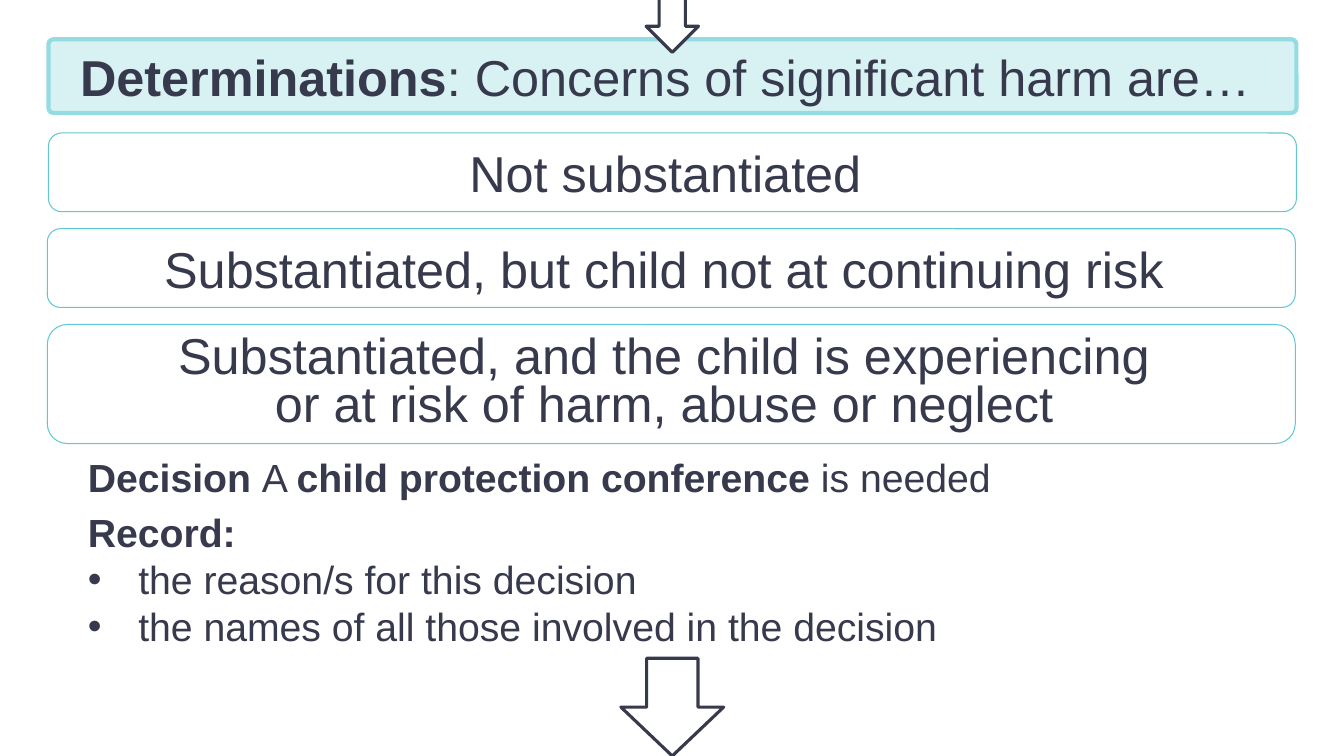
"""Build the slide on determinations of significant harm."""
from typing import NamedTuple

from lxml.etree import SubElement
from pptx import Presentation
from pptx.dml.color import RGBColor as Rgb
from pptx.enum.shapes import MSO_SHAPE as Kind
from pptx.enum.text import MSO_ANCHOR as Anchor, PP_ALIGN as Align
from pptx.oxml.ns import qn
from pptx.util import Pt

HUES = {"ink": "37394C", "white": "FFFFFF", "teal": "60C8D3",
        "edge": "95DBE2", "pale": "D8F2F4"}


class Line(NamedTuple):
    """A paragraph; parts between stars are bold."""
    text: str
    after: float = 0
    dot: bool = False


class Box(NamedTuple):
    """A rounded box with its text."""
    left: float
    top: float
    high: float
    lines: list[Line]
    size: float = 36
    fill: str = "white"
    edge: str | None = "teal"
    width: float = 0.75
    curve: float = 0.1667
    pitch: float = 1
    align: Align = Align.CENTER
    anchor: Anchor = Anchor.MIDDLE


class Arrow(NamedTuple):
    """A block arrow that points down."""
    left: float
    top: float
    wide: float
    high: float


WIDE = 891.4
BOXES = [
    Box(53.3, 307.4, 162.7, [
        Line("*Decision *A *child protection conference *is needed", 6),
        Line("*Record:*"),
        Line("the reason/s for this decision", dot=True),
        Line("the names of all those involved in the decision", 6, True),
    ], size=28, edge=None, curve=0.05, align=Align.LEFT, anchor=Anchor.BOTTOM),
    Box(33.8, 231.8, 85, [Line("Substantiated, and the child is experiencing \n"
                               "or at risk of harm, abuse or neglect ")], pitch=0.8),
    Box(33.8, 163.4, 56.2, [Line("Substantiated, but child not at continuing risk ")]),
    Box(34.6, 95, 56.2, [Line("Not substantiated ")]),
    Box(34.6, 28.1, 52.6, [Line("*Determinations*: Concerns of significant harm are… ")],
        fill="pale", edge="edge", width=3, curve=0.068),
]
ARROWS = [Arrow(461.5, -13.7, 37.4, 51.1), Arrow(443.5, 470.2, 73.4, 69.8)]


def hue(name: str) -> Rgb:
    return Rgb.from_string(HUES[name])


def add_shape(slide, kind: Kind, area: tuple, fill: str, edge: str | None, width: float):
    shape = slide.shapes.add_shape(kind, *map(Pt, area))
    shape.shadow.inherit = False
    shape.fill.solid()
    shape.fill.fore_color.rgb = hue(fill)
    if edge:
        shape.line.color.rgb = hue(edge)
        shape.line.width = Pt(width)
    else:
        shape.line.fill.background()
    return shape


def add_dot(para) -> None:
    props = para._p.get_or_add_pPr()
    props.set("marL", str(Pt(36)))
    props.set("indent", str(Pt(-36)))
    SubElement(props, qn("a:buFont")).set("typeface", "Arial")
    SubElement(props, qn("a:buChar")).set("char", "•")


def add_line(para, line: Line, box: Box) -> None:
    para.alignment = box.align
    para.line_spacing = box.pitch
    para.space_after = Pt(line.after)
    if line.dot:
        add_dot(para)
    font = para.font
    font.name, font.size = "Arial", Pt(box.size)
    font.color.rgb = hue("ink")
    for spot, part in enumerate(line.text.split("*")):
        for row, text in enumerate(part.split("\n")):
            if row:
                para.add_line_break()
            if text:
                run = para.add_run()
                run.text = text
                run.font.bold = spot % 2 == 1


def add_box(slide, box: Box) -> None:
    area = (box.left, box.top, WIDE, box.high)
    shape = add_shape(slide, Kind.ROUNDED_RECTANGLE, area, box.fill, box.edge, box.width)
    shape.adjustments[0] = box.curve
    frame = shape.text_frame
    frame.word_wrap = True
    frame.vertical_anchor = box.anchor
    for spot, line in enumerate(box.lines):
        para = frame.add_paragraph() if spot else frame.paragraphs[0]
        add_line(para, line, box)


def main() -> None:
    deck = Presentation()
    deck.slide_width, deck.slide_height = Pt(960), Pt(540)
    slide = deck.slides.add_slide(deck.slide_layouts[6])
    for box in BOXES:
        add_box(slide, box)
    for arrow in ARROWS:
        add_shape(slide, Kind.DOWN_ARROW, arrow, "white", "ink", 2.25)
    deck.save("out.pptx")


if __name__ == "__main__":
    main()
